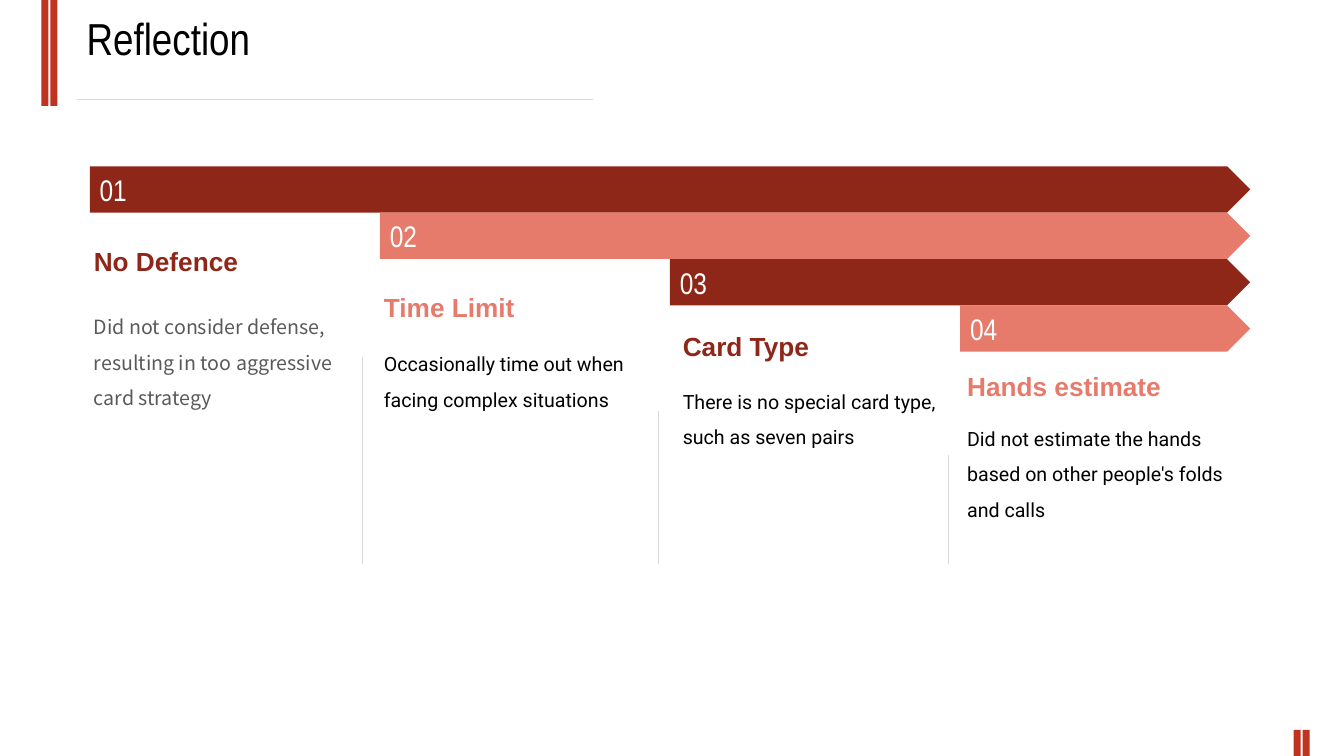
from dataclasses import dataclass

from lxml.etree import SubElement
from pptx import Presentation
from pptx.dml.color import RGBColor
from pptx.enum.shapes import MSO_CONNECTOR, MSO_SHAPE
from pptx.enum.text import MSO_ANCHOR, MSO_AUTO_SIZE, PP_ALIGN
from pptx.oxml.ns import qn
from pptx.slide import Slide
from pptx.text.text import TextFrame
from pptx.util import Inches, Pt

DARK, LIGHT, ACCENT = "8F2718", "E67B6C", "BF3420"
WHITE, BLACK, GREY, RULE = "FFFFFF", "000000", "595959", "D9D9D9"

SLIDE_WIDTH, SLIDE_HEIGHT = 13.33, 7.5
GRID_LEFT, GRID_TOP, GRID_RIGHT = 0.89, 1.65, 12.4
COLUMN, ROW = (GRID_RIGHT - GRID_LEFT) / 4, 0.46
TEXT_WIDTH, HEADING_HEIGHT = 0.96 * COLUMN, 0.9 * ROW
BODY_LINE, DIVIDER_END = 0.35, 8.57


@dataclass(frozen=True)
class Lesson:
    """One step; text_column and the row fields are grid positions."""
    heading: str
    body: str
    text_column: float
    heading_row: float
    body_row: float
    body_lines: int
    body_font: str = "Roboto"
    body_color: str = BLACK


@dataclass(frozen=True)
class Divider:
    column: float
    row: float


LESSONS = (
    Lesson("No Defence", "Did not consider defense, resulting in too aggressive card strategy",
           -0.02, 1.59, 2.85, 3, "Noto Sans CJK SC", GREY),
    Lesson("Time Limit", "Occasionally time out when facing complex situations",
           0.98, 2.59, 3.65, 2),
    Lesson("Card Type", "There is no special card type, such as seven pairs",
           2.01, 3.43, 4.46, 2),
    Lesson("Hands estimate", "Did not estimate the hands based on other people's folds and calls",
           2.99, 4.3, 5.26, 3),
)
DIVIDERS = (Divider(0.94, 4.11), Divider(1.96, 5.28), Divider(2.96, 6.22))


def column_x(column: float) -> float:
    return GRID_LEFT + column * COLUMN


def row_y(row: float) -> float:
    return GRID_TOP + row * ROW


def rgb(color: str) -> RGBColor:
    return RGBColor.from_string(color)


def write(frame: TextFrame, text: str, *, size: float, font: str, color: str,
          bold: bool = False, spacing: float = 1.0,
          anchor: MSO_ANCHOR = MSO_ANCHOR.TOP) -> None:
    frame.word_wrap = True
    frame.auto_size = MSO_AUTO_SIZE.NONE
    frame.vertical_anchor = anchor
    paragraph = frame.paragraphs[0]
    paragraph.alignment = PP_ALIGN.LEFT
    paragraph.line_spacing = spacing
    run = paragraph.add_run()
    run.text = text
    run.font.size, run.font.name, run.font.bold = Pt(size), font, bold
    run.font.color.rgb = rgb(color)


def add_block(slide: Slide, preset: MSO_SHAPE, left: float, top: float,
              width: float, height: float, color: str) -> TextFrame:
    """Draw a borderless filled shape and return its text frame."""
    block = slide.shapes.add_shape(preset, *map(Inches, (left, top, width, height)))
    block.shadow.inherit = False
    block.fill.solid()
    block.fill.fore_color.rgb = rgb(color)
    block.line.fill.background()
    return block.text_frame


def add_rule(slide: Slide, x1: float, y1: float, x2: float, y2: float) -> None:
    rule = slide.shapes.add_connector(MSO_CONNECTOR.STRAIGHT, *map(Inches, (x1, y1, x2, y2)))
    rule.line.color.rgb = rgb(RULE)
    rule.line.width = Pt(0.75)
    SubElement(rule._element.spPr, qn("a:effectLst"))


def add_stripes(slide: Slide, left: float, top: float, height: float) -> None:
    for stripe in range(2):
        add_block(slide, MSO_SHAPE.RECTANGLE, left + stripe * 0.09, top, 0.07, height, ACCENT)


def add_text(slide: Slide, left: float, top: float, width: float, height: float) -> TextFrame:
    return slide.shapes.add_textbox(*map(Inches, (left, top, width, height))).text_frame


def add_lesson(slide: Slide, index: int, lesson: Lesson) -> None:
    color = (DARK, LIGHT)[index % 2]
    left = column_x(index)
    bar = add_block(slide, MSO_SHAPE.PENTAGON, left, row_y(index), GRID_RIGHT - left, ROW, color)
    write(bar, f"{index + 1:02}", size=21.3, font="Arial Narrow", color=WHITE,
          anchor=MSO_ANCHOR.MIDDLE)
    text_left = column_x(lesson.text_column)
    heading = add_text(slide, text_left, row_y(lesson.heading_row), TEXT_WIDTH, HEADING_HEIGHT)
    write(heading, lesson.heading, size=18.7, font="Arial", color=color, bold=True)
    body = add_text(slide, text_left, row_y(lesson.body_row), TEXT_WIDTH,
                    lesson.body_lines * BODY_LINE + 0.07)
    write(body, lesson.body, size=14, font=lesson.body_font, color=lesson.body_color, spacing=1.5)


def add_title(slide: Slide, text: str) -> None:
    title = slide.shapes.title
    title.left, title.top = Inches(0.76), Inches(0.06)
    title.width, title.height = Inches(0.65 * SLIDE_WIDTH), Inches(0.64)
    write(title.text_frame, text, size=32, font="Arial Narrow", color=BLACK)


def main() -> None:
    presentation = Presentation()
    presentation.slide_width = Inches(SLIDE_WIDTH)
    presentation.slide_height = Inches(SLIDE_HEIGHT)
    slide = presentation.slides.add_slide(presentation.slide_layouts[5])
    add_stripes(slide, 0.41, 0, 0.14 * SLIDE_HEIGHT)
    add_stripes(slide, 12.83, SLIDE_HEIGHT - 0.26, 0.26)
    add_rule(slide, 0.76, 0.99, 5.88, 0.99)
    for index, lesson in enumerate(LESSONS):
        add_lesson(slide, index, lesson)
    for divider in DIVIDERS:
        x = column_x(divider.column)
        add_rule(slide, x, row_y(divider.row), x, row_y(DIVIDER_END))
    add_title(slide, "Reflection")
    presentation.save("out.pptx")


if __name__ == "__main__":
    main()
